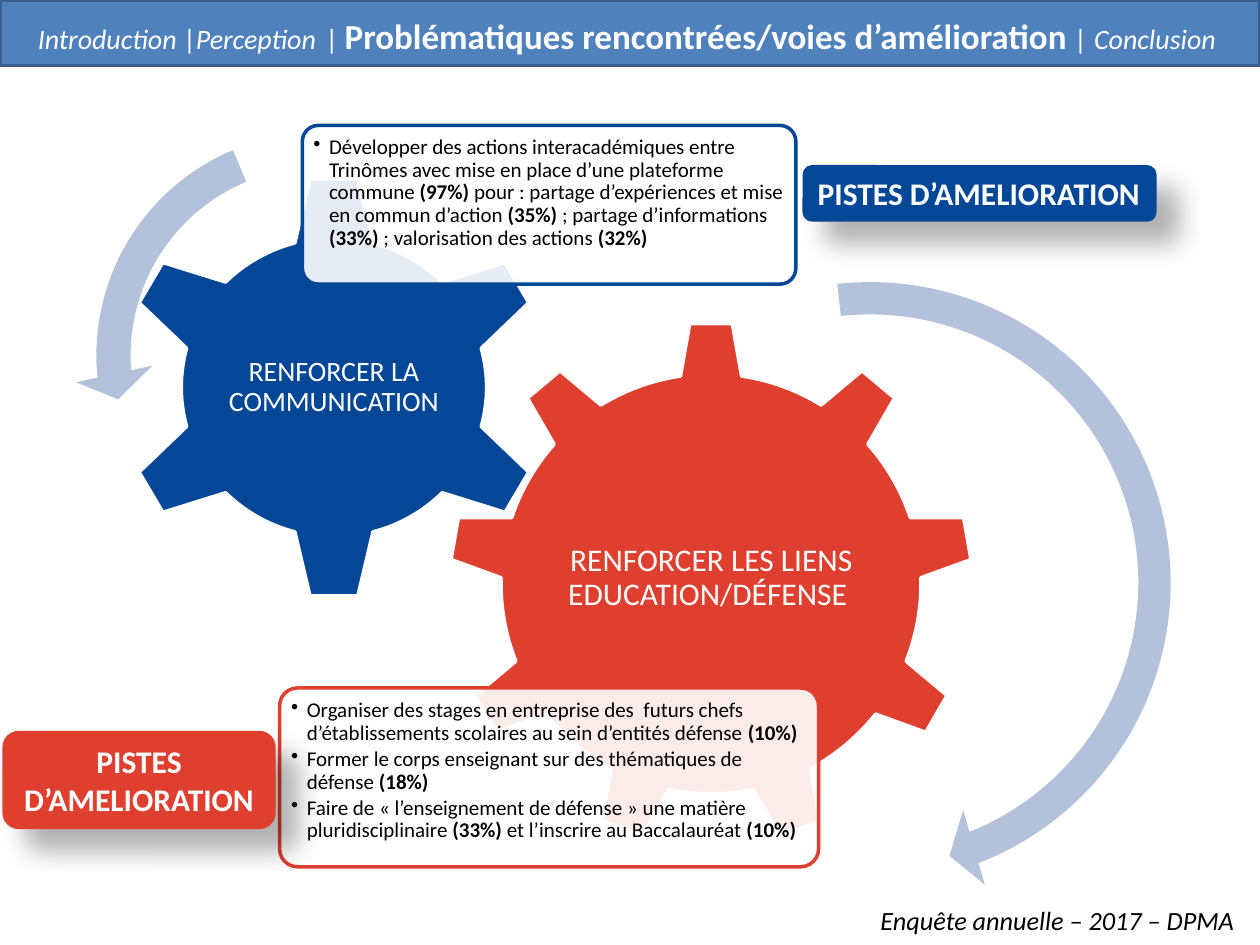
from lxml import etree
from pptx import Presentation
from pptx import util as u
from pptx.dml.color import RGBColor
from pptx.enum import shapes, text
from pptx.oxml import ns

BLUE = RGBColor(0x05, 0x47, 0x97)
RED = RGBColor(0xDE, 0x3F, 0x2E)
PALE_BLUE = RGBColor(0xB3, 0xC1, 0xDB)
BANNER_BLUE = RGBColor(0x4F, 0x81, 0xBD)
BANNER_EDGE = RGBColor(0x3A, 0x5F, 0x8C)
WHITE = RGBColor(0xFF, 0xFF, 0xFF)
BLACK = RGBColor(0, 0, 0)

KIND = shapes.MSO_SHAPE
ALIGN = text.PP_ALIGN
ANCHOR = text.MSO_ANCHOR
FIT = text.MSO_AUTO_SIZE.SHAPE_TO_FIT_TEXT

COMMUNICATION_TRACKS = [
    "Développer des actions interacadémiques entre Trinômes avec mise en place "
    "d’une plateforme commune *(97%) *pour : partage d’expériences et mise en "
    "commun d’action *(35%) *; partage d’informations *(33%) *; valorisation "
    "des actions *(32%)",
]
DEFENCE_TRACKS = [
    "Organiser des stages en entreprise des  futurs chefs d’établissements "
    "scolaires au sein d’entités défense *(10%)",
    "Former le corps enseignant sur des thématiques de défense *(18%)",
    "Faire de « l’enseignement de défense » une matière pluridisciplinaire "
    "*(33%) *et l’inscrire au Baccalauréat *(10%)",
]
BANNER_RUNS = [
    ("Introduction ", dict(italic=True)),
    ("|", {}),
    ("Perception", dict(italic=True)),
    (" ", dict(size=24, bold=True)),
    ("| ", {}),
    ("Problématiques rencontrées/voies d’amélioration ", dict(size=20, bold=True)),
    ("| Conclusion ", dict(italic=True)),
]


def add_run(paragraph, words, size=16, color=WHITE, bold=False, italic=False):
    """Append formatted words to a paragraph."""
    run = paragraph.add_run()
    run.text = words
    font = run.font
    font.name, font.size = "Calibri", u.Pt(size)
    font.bold, font.italic = bold, italic
    font.color.rgb = color


def add_child(parent, tag, **attributes):
    """Append a DrawingML element and return it."""
    child = etree.SubElement(parent, ns.qn(tag))
    for name, value in attributes.items():
        child.set(name, str(value))
    return child


def add_block(slide, kind, box, fill, line=None, adjustments=()):
    """Add a flat preset shape."""
    shape = slide.shapes.add_shape(kind, *map(u.Pt, box))
    shape.shadow.inherit = False
    shape.fill.solid()
    shape.fill.fore_color.rgb = fill
    if line is None:
        shape.line.fill.background()
    else:
        shape.line.color.rgb = line
        shape.line.width = u.Pt(2)
    for index, value in enumerate(adjustments):
        shape.adjustments[index] = value
    return shape


def set_frame(shape, anchor, inset):
    """Set the anchor and equal insets of a text frame and return the frame."""
    frame = shape.text_frame
    frame.word_wrap = True
    frame.vertical_anchor = anchor
    frame.margin_left = frame.margin_right = u.Pt(inset)
    frame.margin_top = frame.margin_bottom = u.Pt(inset)
    return frame


def add_gear(slide, kind, box, color, words, size, caption_box):
    """Add a gear and its centred caption."""
    add_block(slide, kind, box, color, WHITE)
    caption = slide.shapes.add_textbox(*map(u.Pt, caption_box))
    paragraph = set_frame(caption, ANCHOR.MIDDLE, 1.8).paragraphs[0]
    paragraph.alignment = ALIGN.CENTER
    paragraph.line_spacing = 0.9
    add_run(paragraph, words, size=size)


def add_track_panel(slide, box, color, tracks):
    """Add a translucent panel of bullets; asterisks delimit bold words."""
    panel = add_block(slide, KIND.ROUNDED_RECTANGLE, box, WHITE, color, [0.1])
    solid = panel._element.spPr.find(ns.qn("a:solidFill"))
    add_child(solid[0], "a:alpha", val=90000)
    frame = set_frame(panel, ANCHOR.TOP, 3.6)
    for index, track in enumerate(tracks):
        paragraph = frame.add_paragraph() if index else frame.paragraphs[0]
        paragraph.alignment = ALIGN.LEFT
        paragraph.level = 1
        paragraph.line_spacing = 0.9
        paragraph.space_after = u.Pt(2)
        properties = paragraph._p.get_or_add_pPr()
        properties.set("marL", str(u.Pt(9)))
        properties.set("indent", str(u.Pt(-9)))
        add_child(properties, "a:buChar", char="•")
        for part, words in enumerate(track.split("*")):
            add_run(paragraph, words, size=12, color=BLACK, bold=part % 2 == 1)


def add_label(slide, box, color, alignment, wrap):
    """Add a rounded label with a soft shadow."""
    label = add_block(slide, KIND.ROUNDED_RECTANGLE, box, color)
    effects = label._element.spPr.find(ns.qn("a:effectLst"))
    shadow = add_child(effects, "a:outerShdw", blurRad=u.Pt(15), dist=u.Pt(18),
                       dir=45 * 60000, algn="ctr", rotWithShape=0)
    add_child(add_child(shadow, "a:srgbClr", val=BLACK), "a:alpha", val=30000)
    frame = label.text_frame
    frame.word_wrap = wrap
    frame.auto_size = FIT
    frame.vertical_anchor = ANCHOR.TOP
    frame.paragraphs[0].alignment = alignment
    add_run(frame.paragraphs[0], "PISTES D’AMELIORATION", size=18, bold=True)


def add_banner(slide):
    """Add the navigation banner."""
    banner = add_block(slide, KIND.RECTANGLE, (0, 0, 720, 37.5), BANNER_BLUE, BANNER_EDGE)
    banner.text_frame.vertical_anchor = ANCHOR.MIDDLE
    paragraph = banner.text_frame.paragraphs[0]
    paragraph.alignment = ALIGN.CENTER
    for words, style in BANNER_RUNS:
        add_run(paragraph, words, **style)


def add_source(slide):
    """Add the survey credit."""
    credit = slide.shapes.add_textbox(*map(u.Pt, (496, 513.4, 221, 25)))
    credit.text_frame.word_wrap = True
    credit.text_frame.auto_size = FIT
    add_run(credit.text_frame.paragraphs[0], "Enquête annuelle – 2017 – DPMA",
            size=15, color=BLACK, italic=True)


def main():
    """Build and save the slide."""
    presentation = Presentation()
    presentation.slide_width, presentation.slide_height = u.Pt(720), u.Pt(540)
    slide = presentation.slides.add_slide(presentation.slide_layouts[6])

    add_gear(slide, KIND.GEAR_9, (256.3, 183.6, 300, 300), RED,
             "RENFORCER LES LIENS EDUCATION/DÉFENSE ", 18, (316.8, 253.4, 179.3, 154.1))
    add_track_panel(slide, (159.8, 393.1, 308, 102.2), RED, DEFENCE_TRACKS)
    add_gear(slide, KIND.GEAR_6, (67, 99.4, 247.7, 244), BLUE,
             "RENFORCER LA COMMUNICATION", 16, (128.9, 161.3, 123.8, 120.2))
    add_track_panel(slide, (172.8, 71.7, 282, 90.7), BLUE, COMMUNICATION_TRACKS)

    right_arrow = add_block(slide, KIND.CIRCULAR_ARROW, (312.5, 148.3, 369.4, 369.4),
                            PALE_BLUE, None, [0.05, 3.13, 33.04, 150.15, 0.06])
    right_arrow.rotation = 13.5
    add_block(slide, KIND.LEFT_CIRCULAR_ARROW, (42.5, 63.4, 279.4, 279.4),
              PALE_BLUE, None, [0.07, 4.3, 104.89, 148.38, 0.08])

    add_banner(slide)
    add_label(slide, (458.6, 94.3, 202.3, 32.4), BLUE, ALIGN.LEFT, False)
    add_label(slide, (1.4, 417.6, 156.2, 56.2), RED, ALIGN.CENTER, True)
    add_source(slide)
    presentation.save("out.pptx")


if __name__ == "__main__":
    main()
